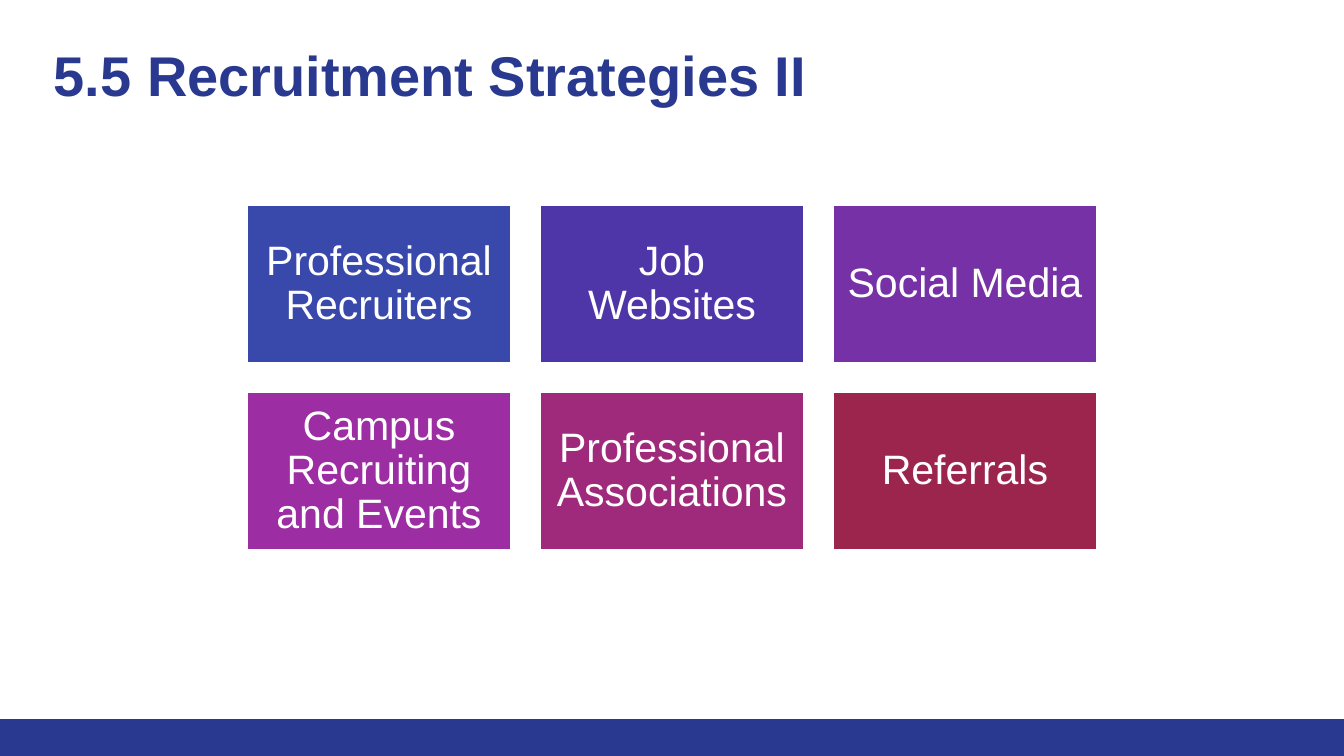
from pptx import Presentation
from pptx.dml.color import RGBColor
from pptx.enum import shapes, text
from pptx.util import Inches, Pt

NAVY = RGBColor(0x2A, 0x39, 0x90)
WHITE = RGBColor(0xFF, 0xFF, 0xFF)
TITLE = "5.5 Recruitment Strategies II"
CARDS = [
    ("Professional Recruiters", RGBColor(0x39, 0x49, 0xAB)),
    ("Job Websites", RGBColor(0x4E, 0x35, 0xA8)),
    ("Social Media", RGBColor(0x75, 0x31, 0xA5)),
    ("Campus Recruiting and Events", RGBColor(0x9C, 0x2D, 0xA2)),
    ("Professional Associations", RGBColor(0x9F, 0x29, 0x7B)),
    ("Referrals", RGBColor(0x9C, 0x25, 0x4D)),
]
COLS = 3
LEFT, TOP = 1.83, 1.52
WIDE, HIGH, GAP = 1.98, 1.19, 0.2


def place(shape, x, y, w, h):
    shape.left, shape.top = Inches(x), Inches(y)
    shape.width, shape.height = Inches(w), Inches(h)


def add_rect(slide, x, y, w, h, fill):
    rect = slide.shapes.add_shape(
        shapes.MSO_SHAPE.RECTANGLE, Inches(x), Inches(y), Inches(w), Inches(h))
    rect.shadow.inherit = False
    rect.fill.solid()
    rect.fill.fore_color.rgb = fill
    rect.line.fill.background()
    return rect


def set_text(shape, words, size, color, align, anchor, inset, bold=False):
    frame = shape.text_frame
    frame.word_wrap = True
    frame.auto_size = text.MSO_AUTO_SIZE.NONE
    frame.vertical_anchor = anchor
    frame.margin_left = frame.margin_right = Inches(inset)
    frame.margin_top = frame.margin_bottom = Inches(inset)
    para = frame.paragraphs[0]
    para.alignment = align
    run = para.add_run()
    run.text = words
    font = run.font
    font.name, font.size, font.bold = "Arial", Pt(size), bold
    font.color.rgb = color
    return para


def main():
    deck = Presentation()
    deck.slide_width = Inches(10)
    deck.slide_height = deck.slide_width * 9 // 16
    slide = deck.slides.add_slide(deck.slide_layouts[5])

    add_rect(slide, 0, 5.35, 10, 0.28, NAVY)

    title = slide.shapes.title
    place(title, 0.3, 0.2, 9.32, 0.66)
    set_text(title, TITLE, 30, NAVY, text.PP_ALIGN.LEFT,
             text.MSO_ANCHOR.TOP, 0.1, bold=True)

    for i, (words, fill) in enumerate(CARDS):
        row, col = divmod(i, COLS)
        card = add_rect(slide, LEFT + col * (WIDE + GAP),
                        TOP + row * (HIGH + GAP), WIDE, HIGH, fill)
        card.line.color.rgb = WHITE
        card.line.width = Pt(2)
        para = set_text(card, words, 22, WHITE, text.PP_ALIGN.CENTER,
                        text.MSO_ANCHOR.MIDDLE, 0.09)
        para.line_spacing = 0.9


    deck.save("out.pptx")


if __name__ == "__main__":
    main()
